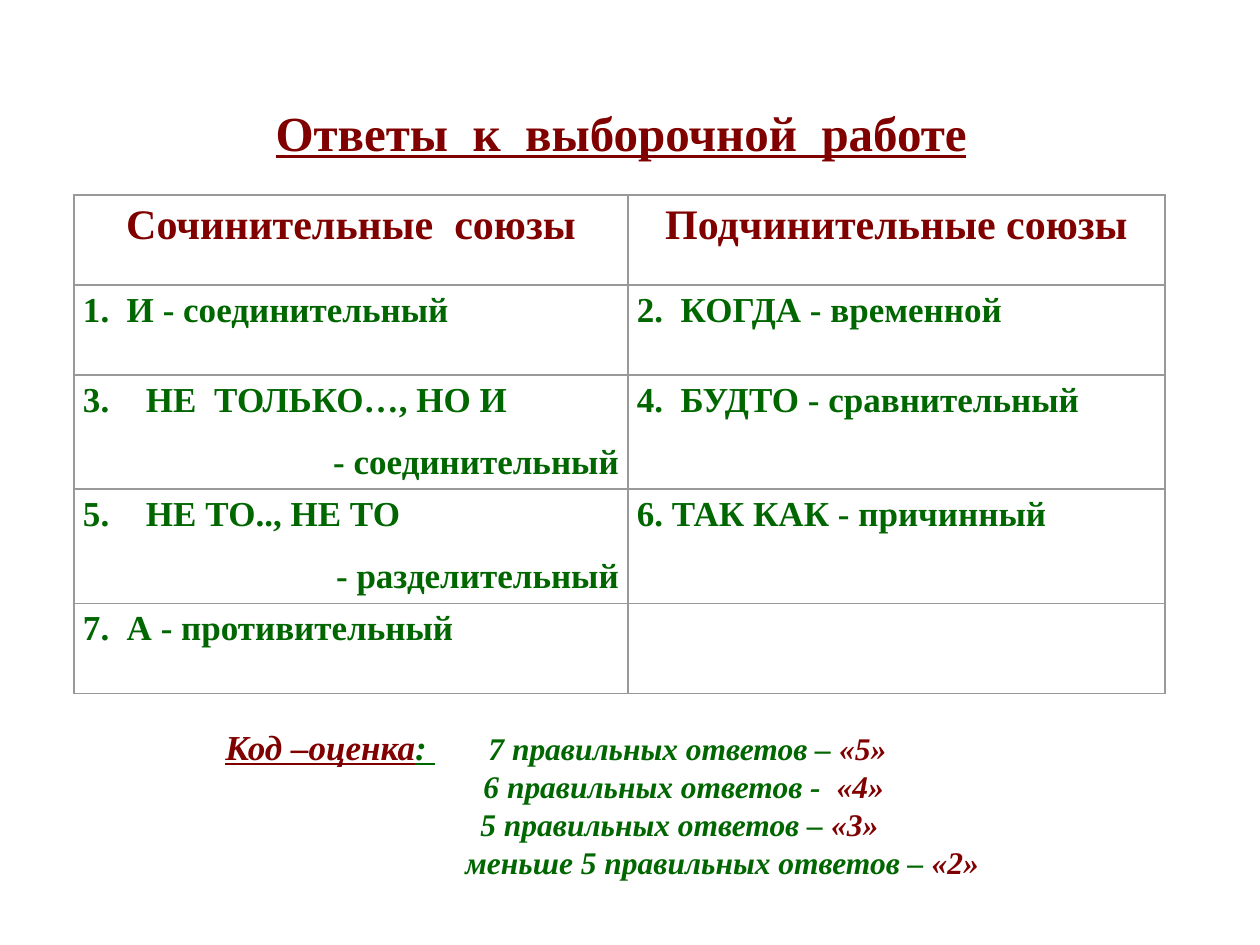
from lxml import etree
from pptx import Presentation
from pptx.dml.color import RGBColor
from pptx.enum.text import MSO_ANCHOR, MSO_AUTO_SIZE, PP_ALIGN
from pptx.oxml.ns import qn
from pptx.util import Pt

PX = 914400 / 126
FONT = "Times New Roman"
MAROON = RGBColor(0x80, 0x00, 0x00)
GREEN = RGBColor(0x00, 0x66, 0x00)
WHITE = RGBColor(0xFF, 0xFF, 0xFF)
BORDER = "999999"
LEFT, CENTER, RIGHT = PP_ALIGN.LEFT, PP_ALIGN.CENTER, PP_ALIGN.RIGHT
TOP, MIDDLE = MSO_ANCHOR.TOP, MSO_ANCHOR.MIDDLE
NO_FIT = MSO_AUTO_SIZE.NONE

COLS = [554, 537]
ROWS = [90, 90, 114, 114, 90]
HEADERS = ["Сочинительные  союзы", "Подчинительные союзы"]
ANSWERS = [
    ["1.  И - соединительный", "2.  КОГДА - временной"],
    [(3, "НЕ  ТОЛЬКО…, НО И", "- соединительный"), "4.  БУДТО - сравнительный"],
    [(5, "НЕ ТО.., НЕ ТО", "- разделительный"), "6. ТАК КАК - причинный"],
    ["7.  А - противительный", ""],
]
SCORES = [
    (258, "6 правильных ответов -  ", "«4»"),
    (255, "5 правильных ответов – ", "«3»"),
    (240, "меньше 5 правильных ответов – ", "«2»"),
]


def px(n):
    return int(n * PX)


def add_run(p, text, size, color, **fmt):
    r = p.add_run()
    r.text = text
    values = {"name": FONT, "size": Pt(size), "bold": True, **fmt}
    for name, value in values.items():
        setattr(r.font, name, value)
    r.font.color.rgb = color


def add_title(s, text):
    sp = s.shapes.title
    sp.left, sp.top, sp.width, sp.height = map(px, (263, 96, 770, 72))
    tf = sp.text_frame
    tf.auto_size, tf.vertical_anchor = NO_FIT, TOP
    p = tf.paragraphs[0]
    p.alignment = LEFT
    add_run(p, text, 28, MAROON, underline=True)


def format_cell(cell):
    cell.margin_left = cell.margin_right = px(9)
    cell.margin_top = cell.margin_bottom = 0
    tcPr = cell._tc.get_or_add_tcPr()
    for side in ("lnL", "lnR", "lnT", "lnB"):
        ln = etree.SubElement(tcPr, qn(f"a:{side}"), w=str(Pt(1)))
        fill = etree.SubElement(ln, qn("a:solidFill"))
        etree.SubElement(fill, qn("a:srgbClr"), val=BORDER)
    cell.fill.solid()
    cell.fill.fore_color.rgb = WHITE


def fill_paragraph(p, text, size, color, align):
    values = {"alignment": align, "line_spacing": 1.15, "space_after": Pt(10)}
    for name, value in values.items():
        setattr(p, name, value)
    add_run(p, text, size, color)


def number_paragraph(p, start):
    pPr = p._p.get_or_add_pPr()
    pPr.set("marL", str(px(63)))
    pPr.set("indent", str(px(-63)))
    etree.SubElement(pPr, qn("a:buAutoNum"), type="arabicPeriod", startAt=str(start))


def fill_answer(cell, answer):
    tf = cell.text_frame
    p = tf.paragraphs[0]
    if isinstance(answer, tuple):
        start, words, kind = answer
        fill_paragraph(p, words, 20, GREEN, LEFT)
        number_paragraph(p, start)
        fill_paragraph(tf.add_paragraph(), kind, 20, GREEN, RIGHT)
    elif answer:
        fill_paragraph(p, answer, 20, GREEN, LEFT)


def add_answer_table(s):
    frame = s.shapes.add_table(len(ROWS), len(COLS), px(74), px(195),
                               px(sum(COLS)), px(sum(ROWS)))
    table = frame.table
    table.first_row = table.horz_banding = False
    for col, width in zip(table.columns, COLS):
        col.width = px(width)
    for row, height in zip(table.rows, ROWS):
        row.height = px(height)
    for cell in table.iter_cells():
        format_cell(cell)
    for i, text in enumerate(HEADERS):
        p = table.cell(0, i).text_frame.paragraphs[0]
        fill_paragraph(p, text, 24, MAROON, CENTER)
    for i, answers in enumerate(ANSWERS, 1):
        for j, answer in enumerate(answers):
            fill_answer(table.cell(i, j), answer)


def add_score(p, text, mark):
    add_run(p, text, 18, GREEN, italic=True)
    add_run(p, mark, 18, MAROON, italic=True)


def add_score_key(s):
    sp = s.shapes.add_textbox(*map(px, (213, 718, 863, 170)))
    tf = sp.text_frame
    tf.word_wrap, tf.vertical_anchor = True, MIDDLE
    p = tf.paragraphs[0]
    tabs = etree.SubElement(p._p.get_or_add_pPr(), qn("a:tabLst"))
    etree.SubElement(tabs, qn("a:tab"), pos=str(px(263)), algn="l")
    add_run(p, "Код –оценка", 20, MAROON, italic=True, underline=True)
    add_run(p, ": ", 20, GREEN, italic=True, underline=True)
    add_score(p, "\t7 правильных ответов – ", "«5»")
    for indent, text, mark in SCORES:
        p = tf.add_paragraph()
        p._p.get_or_add_pPr().set("marL", str(px(indent)))
        add_score(p, text, mark)


def main():
    prs = Presentation()
    prs.slide_width, prs.slide_height = px(1260), px(945)
    s = prs.slides.add_slide(prs.slide_layouts[5])
    add_score_key(s)
    add_title(s, "Ответы  к  выборочной  работе")
    add_answer_table(s)
    prs.save("out.pptx")


if __name__ == "__main__":
    main()
